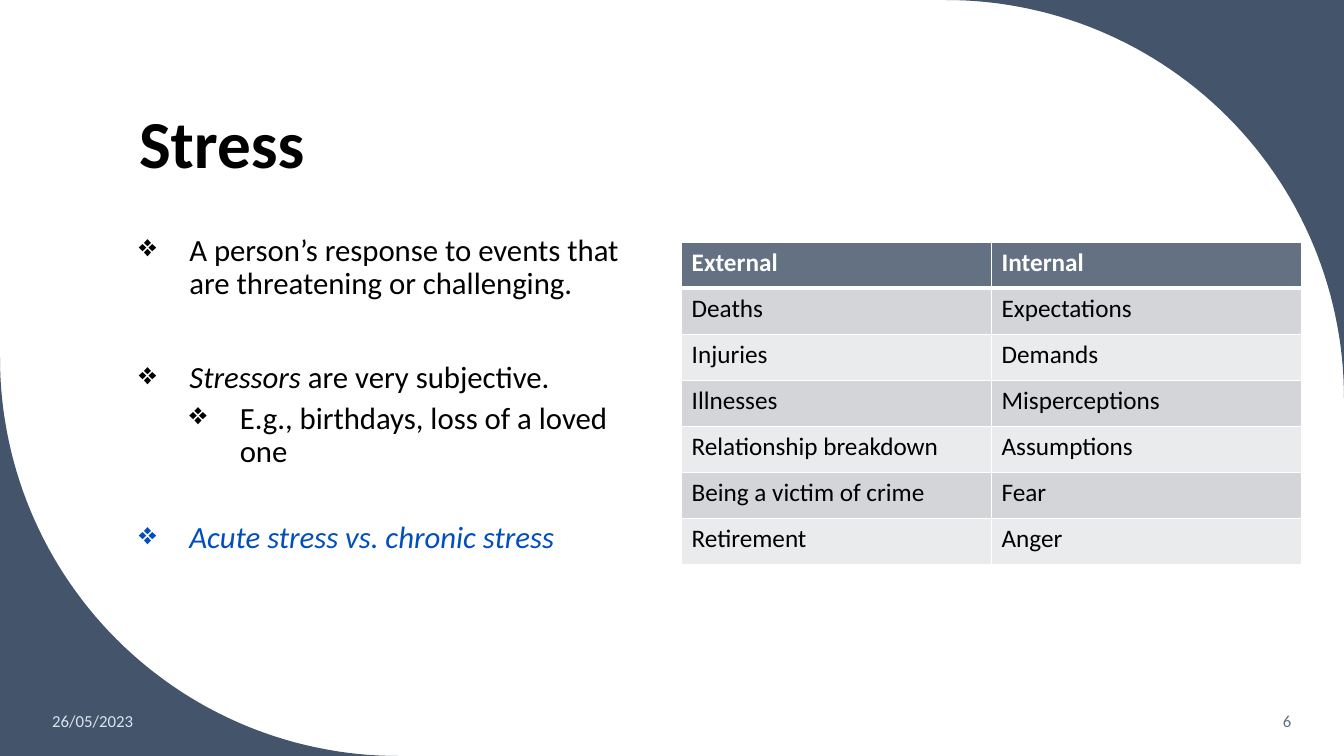
from math import cos, pi, sin

from lxml import etree
from pptx import Presentation
from pptx.dml.color import RGBColor
from pptx.enum.text import MSO_ANCHOR as Anchor, PP_ALIGN as Align
from pptx.oxml.ns import qn
from pptx.util import Pt

NAVY = RGBColor(0x44, 0x54, 0x6A)
SLATE = RGBColor(0x63, 0x71, 0x83)
PALE_BLUE = RGBColor(0xDA, 0xE5, 0xEF)
BLUE = RGBColor(0x00, 0x4E, 0xBF)
BLACK = RGBColor(0, 0, 0)
WHITE = RGBColor(0xFF, 0xFF, 0xFF)
BANDS = [RGBColor(0xEA, 0xEB, 0xED), RGBColor(0xD3, 0xD5, 0xD9)]
WIDTH, HEIGHT = 960, 540
RADIUS = 284.4
ARC_STEPS = 60

deck = Presentation()
deck.slide_width, deck.slide_height = Pt(WIDTH), Pt(HEIGHT)
page = deck.slides.add_slide(deck.slide_layouts[6])


def add_span(para, text, size, color, bold=False, italic=False):
    span = para.add_run()
    span.text = text
    font = span.font
    font.name, font.size, font.color.rgb = "Calibri", Pt(size), color
    font.bold, font.italic = bold, italic


def add_box(left, top, width, height, anchor):
    box = page.shapes.add_textbox(Pt(left), Pt(top), Pt(width), Pt(height))
    frame = box.text_frame
    frame.word_wrap = True
    frame.vertical_anchor = anchor
    return frame


# Curved corners: top right, and the same outline turned half round
for corner_x, corner_y, turn in [(WIDTH, 0, 1), (0, HEIGHT, -1)]:
    center_x = corner_x - turn * RADIUS
    center_y = corner_y + turn * RADIUS
    angles = [pi / 2 * step / ARC_STEPS for step in range(ARC_STEPS + 1)]
    arc = [(center_x + turn * RADIUS * sin(angle), center_y - turn * RADIUS * cos(angle))
           for angle in angles]
    outline = page.shapes.build_freeform(Pt(corner_x), Pt(corner_y))
    outline.add_line_segments([(Pt(x), Pt(y)) for x, y in arc])
    corner = outline.convert_to_shape()
    corner.shadow.inherit = False
    corner.fill.solid()
    corner.fill.fore_color.rgb = NAVY
    corner.line.fill.background()

# Title
title = add_box(92.2, 30.2, 769.7, 104.4, Anchor.BOTTOM).paragraphs[0]
title.line_spacing = 0.9
add_span(title, "Stress", 48, BLACK, bold=True)

# Bullets: level, space before, color, (text, italic) spans
bullets = [
    (0, 10, BLACK, [("A person’s response to events that are threatening or challenging.", False)]),
    (0, 43.5, BLACK, [("Stressors ", True), ("are very subjective.", False)]),
    (1, 5, BLACK, [("E.g., birthdays, loss of a loved one", False)]),
    (0, 38, BLUE, [("Acute stress vs. chronic stress", True)]),
]
body = add_box(92.2, 164.2, 379.4, 347, Anchor.TOP)
for index, (level, space, color, spans) in enumerate(bullets):
    para = body.add_paragraph() if index else body.paragraphs[0]
    para.level = level
    para.line_spacing = 0.9
    para.space_before = Pt(space)
    props = para._p.get_or_add_pPr()
    props.set("marL", str(Pt(36 * (level + 1))))
    props.set("indent", str(Pt(-36)))
    etree.SubElement(props, qn("a:buChar")).set("char", "❖")
    for text, italic in spans:
        add_span(para, text, 22, color, italic=italic)

# Date and page number
for left, width, align, text, color in [
    (30.2, 133.9, Align.LEFT, "26/05/2023", PALE_BLUE),
    (799.2, 130.3, Align.RIGHT, "6", SLATE),
]:
    para = add_box(left, 500.5, width, 28.8, Anchor.MIDDLE).paragraphs[0]
    para.alignment = align
    add_span(para, text, 12, color)

# Table of stressors
stressors = [
    ("External", "Internal"),
    ("Deaths", "Expectations"),
    ("Injuries", "Demands"),
    ("Illnesses", "Misperceptions"),
    ("Relationship breakdown", "Assumptions"),
    ("Being a victim of crime", "Fear"),
    ("Retirement", "Anger"),
]
ROW_HEIGHT = 32.9
table = page.shapes.add_table(len(stressors), 2, Pt(486.9), Pt(173), Pt(442.8),
                              Pt(ROW_HEIGHT * len(stressors))).table
for row, labels in enumerate(stressors):
    table.rows[row].height = Pt(ROW_HEIGHT)
    header = row == 0
    for column, label in enumerate(labels):
        cell = table.cell(row, column)
        cell.fill.solid()
        cell.fill.fore_color.rgb = SLATE if header else BANDS[row % 2]
        add_span(cell.text_frame.paragraphs[0], label, 18,
                 WHITE if header else BLACK, bold=header)
        # White borders, thicker under the header
        props = cell._tc.get_or_add_tcPr()
        for place, side in enumerate(["lnL", "lnR", "lnT", "lnB"]):
            thick = (row, side) in [(0, "lnB"), (1, "lnT")]
            border = etree.Element(qn("a:" + side), w=str(Pt(3 if thick else 1)))
            paint = etree.SubElement(border, qn("a:solidFill"))
            etree.SubElement(paint, qn("a:srgbClr"), val=str(WHITE))
            props.insert(place, border)

deck.save("out.pptx")
